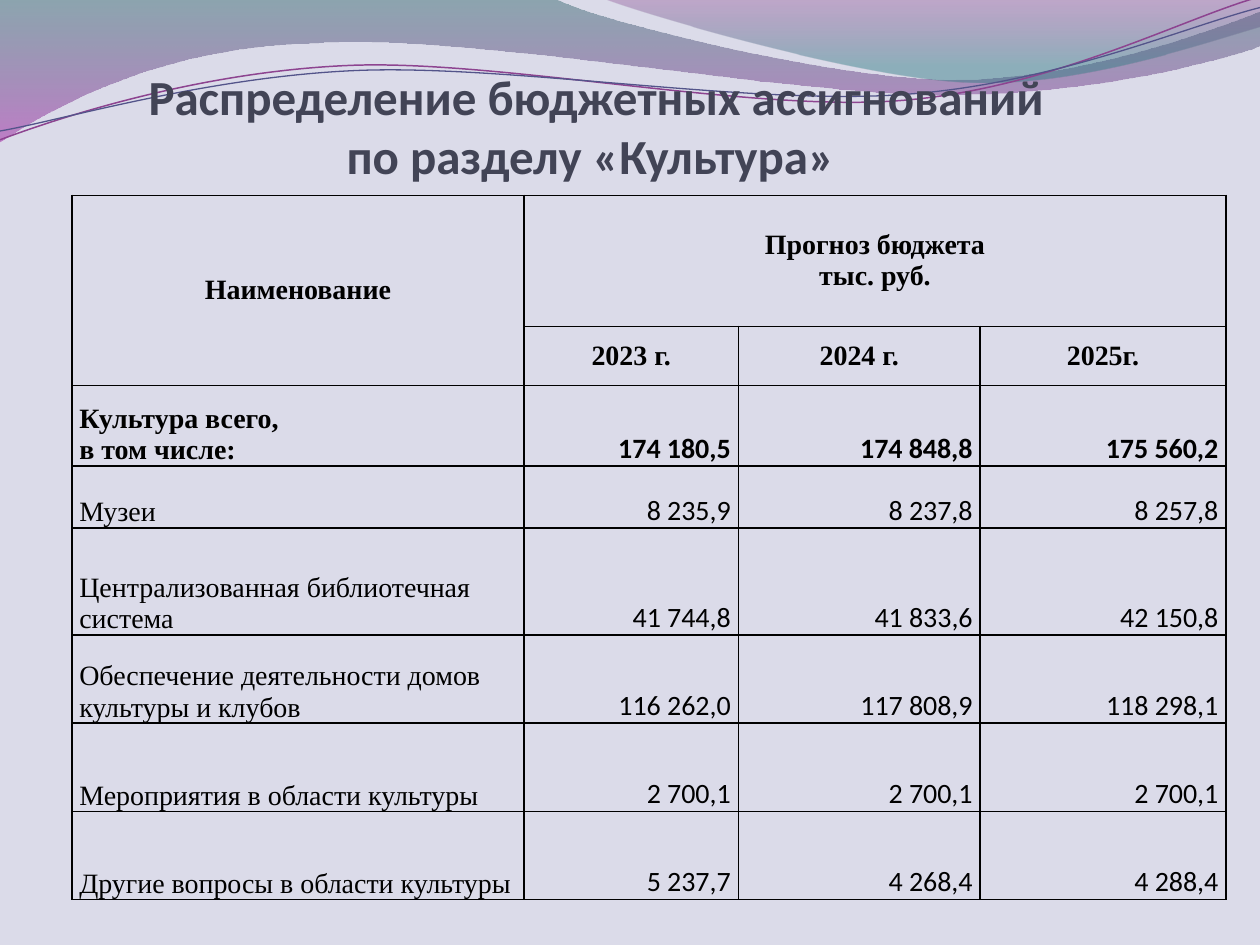
"""Build the slide on budget allocations for culture."""
from lxml import etree
from pptx import Presentation
from pptx.dml.color import RGBColor
from pptx.enum.text import MSO_ANCHOR, MSO_AUTO_SIZE, PP_ALIGN
from pptx.oxml.ns import qn
from pptx.util import Inches, Pt

LEFT, CENTER, RIGHT = PP_ALIGN.LEFT, PP_ALIGN.CENTER, PP_ALIGN.RIGHT
MIDDLE, BOTTOM = MSO_ANCHOR.MIDDLE, MSO_ANCHOR.BOTTOM
NO_FIT = MSO_AUTO_SIZE.NONE
SERIF, SANS = "Times New Roman", "Calibri"
COLORS = {
    "back": "DBDBE9", "title": "424456", "text": "000000",
    "teal": "2D6368", "violet": "A530A9", "plum": "7F2F82", "sea": "2F7B82",
    "purple": "8D4490", "indigo": "53548A",
}
TITLE = "Распределение бюджетных ассигнований по разделу «Культура» "
ROWS = [
    ("Наименование", "Прогноз бюджета\nтыс. руб.", "", ""),
    ("", "2023 г.", "2024 г.", "2025г."),
    ("Культура всего,\nв том числе:", "174 180,5", "174 848,8", "175 560,2"),
    ("Музеи", "8 235,9", "8 237,8", "8 257,8"),
    ("Централизованная библиотечная система", "41 744,8", "41 833,6", "42 150,8"),
    ("Обеспечение деятельности домов культуры и клубов",
     "116 262,0", "117 808,9", "118 298,1"),
    ("Мероприятия в области культуры", "2 700,1", "2 700,1", "2 700,1"),
    ("Другие вопросы в области культуры", "5 237,7", "4 268,4", "4 288,4"),
]
HEADER_ROWS, BOLD_ROWS = 2, 3
COLUMN_WIDTHS = [3.59, 1.7, 1.92, 1.95]
ROW_HEIGHTS = [1.04, 0.47, 0.64, 0.49, 0.85, 0.7, 0.7, 0.7]
MERGES = [((0, 0), (1, 0)), ((0, 1), (0, 3))]
BANDS = [
    {"start": (0, 0),
     "segments": [(4.4, -0.01), (4.76, 0.17, 6.64, 0.63, 7.58, 0.63),
                  (8.53, 0.63, 9.58, 0.26, 10, 0.09), (10.01, 0.36),
                  (9.83, 0.44, 8.7, 0.76, 7.46, 0.75),
                  (6.22, 0.75, 3.82, 0.28, 2.57, 0.34),
                  (1.29, 0.36, 0.46, 0.83, -0.01, 1.13)],
     "stops": [(0, "teal", 45), (1, "violet", 55)]},
    {"start": (4.79, -0.01),
     "segments": [(5.09, 0.11, 6.82, 0.62, 7.69, 0.65),
                  (8.56, 0.69, 9.61, 0.32, 10, 0.21), (10, 0)],
     "stops": [(0, "plum", 30), (0.8, "sea", 45)]},
]
WAVES = [
    {"start": (0, 1.11), "color": "purple", "width": 0.85,
     "segments": [(0.48, 0.93, 1.58, 0.57, 2.77, 0.52),
                  (3.95, 0.47, 5.93, 0.89, 7.13, 0.8),
                  (8.33, 0.71, 9.38, 0.15, 9.98, -0.02)]},
    {"start": (0, 1.04), "color": "indigo", "width": 0.75,
     "segments": [(0.47, 0.96, 1.64, 0.61, 2.83, 0.56),
                  (4.03, 0.51, 5.97, 0.84, 7.17, 0.75),
                  (8.36, 0.67, 9.41, 0.21, 10, 0.06)]},
]


def rgb(name):
    return RGBColor.from_string(COLORS[name])


def set_all(target, values):
    for name, value in values.items():
        setattr(target, name, value)


def bend(shape, segments):
    lines = list(shape.element.spPr.iter(qn("a:lnTo")))
    for line, segment in zip(lines, segments):
        if len(segment) == 2:
            continue
        line.tag = qn("a:cubicBezTo")
        controls = zip(segment[0:4:2], segment[1:4:2])
        for index, (x, y) in enumerate(controls):
            point = etree.Element(qn("a:pt"), x=str(Inches(x) - shape.left),
                                  y=str(Inches(y) - shape.top))
            line.insert(index, point)


def add_outline(slide, start, segments, close):
    builder = slide.shapes.build_freeform(Inches(start[0]), Inches(start[1]))
    ends = [(Inches(segment[-2]), Inches(segment[-1])) for segment in segments]
    builder.add_line_segments(ends, close=close)
    shape = builder.convert_to_shape()
    bend(shape, segments)
    shape.shadow.inherit = False
    return shape


def add_band(slide, band):
    shape = add_outline(slide, band["start"], band["segments"], True)
    shape.line.fill.background()
    shape.fill.gradient()
    shape.fill.gradient_angle = 270
    for stop, (position, color, _) in zip(shape.fill.gradient_stops, band["stops"]):
        stop.position = position
        stop.color.rgb = rgb(color)
    tags = list(shape.element.spPr.iter(qn("a:srgbClr")))
    for tag, (_, _, opacity) in zip(tags, band["stops"]):
        etree.SubElement(tag, qn("a:alpha"), val=str(opacity * 1000))


def add_wave(slide, wave):
    shape = add_outline(slide, wave["start"], wave["segments"], False)
    shape.fill.background()
    shape.line.color.rgb = rgb(wave["color"])
    shape.line.width = Pt(wave["width"])


def style_text(frame, align, color, font):
    for para in frame.paragraphs:
        para.alignment = align
        for span in para.runs:
            set_all(span.font, font)
            span.font.color.rgb = rgb(color)


def place_title(slide):
    title = slide.shapes.title
    title.element.getparent().append(title.element)
    set_all(title, {"left": Inches(1.04), "top": Inches(0.21),
                    "width": Inches(7.38), "height": Inches(1.25)})
    frame = title.text_frame
    frame.text = TITLE
    set_all(frame, {"word_wrap": True, "auto_size": NO_FIT, "vertical_anchor": BOTTOM,
                    "margin_left": 0, "margin_right": 0,
                    "margin_top": Inches(0.05), "margin_bottom": 0})
    style_text(frame, CENTER, "title", {"name": SANS, "size": Pt(28), "bold": True})


def add_borders(cell):
    properties = cell._tc.get_or_add_tcPr()
    for side in ("lnL", "lnR", "lnT", "lnB"):
        line = etree.SubElement(properties, qn(f"a:{side}"), w=str(Pt(1)))
        fill = etree.SubElement(line, qn("a:solidFill"))
        etree.SubElement(fill, qn("a:srgbClr"), val=COLORS["text"])


def fill_cell(cell, text, row, column):
    header = row < HEADER_ROWS
    margin = Inches(0.07 if header else 0.06)
    add_borders(cell)
    cell.fill.background()
    set_all(cell, {"margin_left": margin, "margin_right": margin, "margin_top": 0,
                   "margin_bottom": 0, "vertical_anchor": MIDDLE if header else BOTTOM})
    cell.text_frame.text = text
    align = CENTER if header else RIGHT if column else LEFT
    style_text(cell.text_frame, align, "text",
               {"name": SANS if column and not header else SERIF,
                "size": Pt(16), "bold": row < BOLD_ROWS})


def add_budget_table(slide):
    frame = slide.shapes.add_table(len(ROWS), len(COLUMN_WIDTHS), Inches(0.57), Inches(1.55),
                                   Inches(sum(COLUMN_WIDTHS)), Inches(sum(ROW_HEIGHTS)))
    table = frame.table
    set_all(table, {"first_row": False, "horz_banding": False})
    for column, width in zip(table.columns, COLUMN_WIDTHS):
        column.width = Inches(width)
    for row, height in zip(table.rows, ROW_HEIGHTS):
        row.height = Inches(height)
    for row, texts in enumerate(ROWS):
        for column, text in enumerate(texts):
            fill_cell(table.cell(row, column), text, row, column)
    for first, last in MERGES:
        table.cell(*first).merge(table.cell(*last))


def main():
    deck = Presentation()
    set_all(deck, {"slide_width": Inches(10), "slide_height": Inches(7.5)})
    slide = deck.slides.add_slide(deck.slide_layouts[5])
    slide.background.fill.solid()
    slide.background.fill.fore_color.rgb = rgb("back")
    for band in BANDS:
        add_band(slide, band)
    for wave in WAVES:
        add_wave(slide, wave)
    place_title(slide)
    add_budget_table(slide)
    deck.save("out.pptx")


if __name__ == "__main__":
    main()
